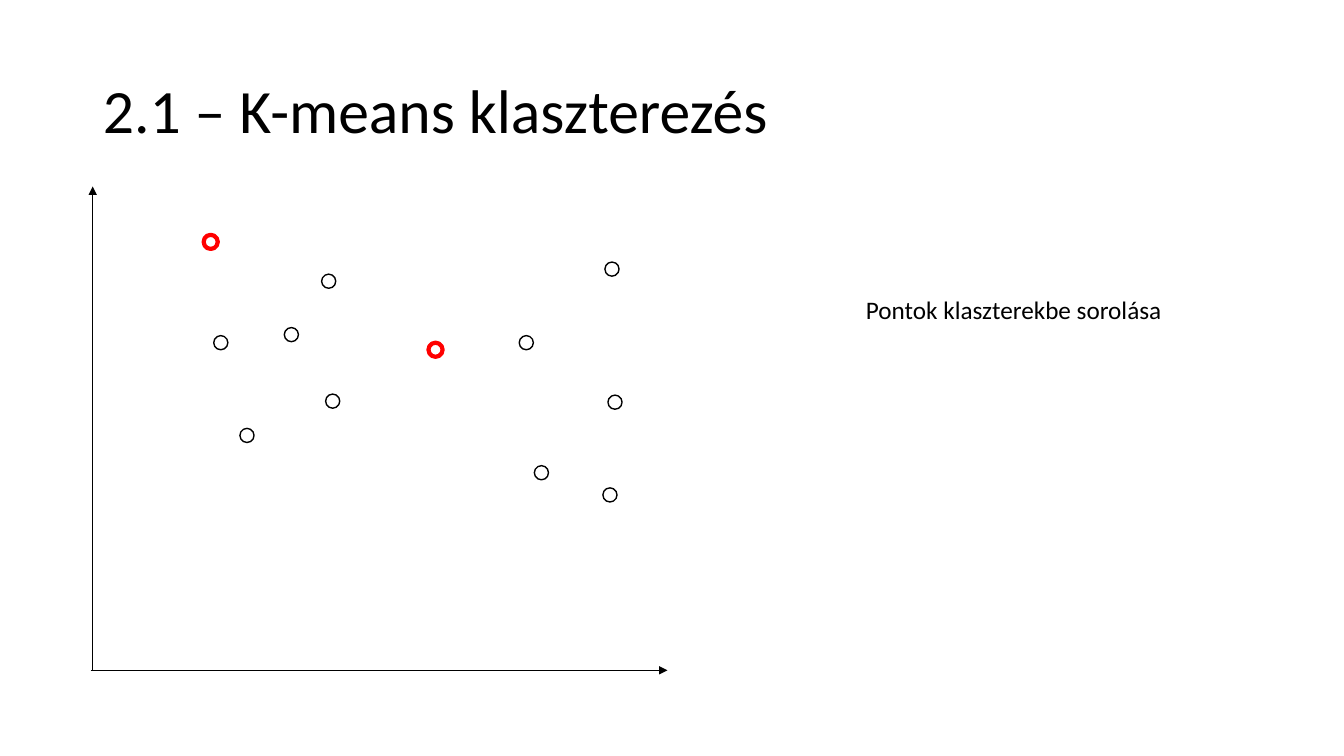
import pptx
import pptx.util
import pptx.dml.color
import pptx.enum.shapes
import pptx.enum.text
import pptx.oxml.ns
import lxml.etree

Inches = pptx.util.Inches
Pt = pptx.util.Pt
Color = pptx.dml.color.RGBColor.from_string

theme = {
    "font": "Calibri",
    "ink": Color("000000"),
    "seed": Color("FF0000"),
    "paper": Color("FFFFFF"),
    "title": Pt(44),
    "note": Pt(18),
    "axis": Pt(0.5),
    "thin": Pt(1),
    "thick": Pt(3),
}


def write(para, text, size):
    run = para.add_run()
    run.text = text
    run.font.name = theme["font"]
    run.font.size = size
    run.font.color.rgb = theme["ink"]


deck = pptx.Presentation()
deck.slide_width = Inches(13.33)
deck.slide_height = Inches(7.5)
slide = deck.slides.add_slide(deck.slide_layouts[5])
shapes = slide.shapes

title = shapes.title
title.left, title.top = Inches(0.92), Inches(0.4)
title.width, title.height = Inches(11.5), Inches(1.45)
title.text_frame.vertical_anchor = pptx.enum.text.MSO_ANCHOR.MIDDLE
head = title.text_frame.paragraphs[0]
head.alignment = pptx.enum.text.PP_ALIGN.LEFT
head.line_spacing = 0.9
write(head, "2.1 – K-means klaszterezés", theme["title"])

base = 6.65
axes = [(0.92, base, 0.92, 1.85), (0.9, base, 6.62, base)]
for ends in axes:
    axis = shapes.add_connector(
        pptx.enum.shapes.MSO_CONNECTOR.STRAIGHT, *[Inches(v) for v in ends])
    axis.line.color.rgb = theme["ink"]
    axis.line.width = theme["axis"]
    tip = lxml.etree.SubElement(
        axis.line._get_or_add_ln(), pptx.oxml.ns.qn("a:tailEnd"))
    tip.set("type", "triangle")
    lxml.etree.SubElement(
        axis._element.spPr, pptx.oxml.ns.qn("a:effectLst"))

points = [
    (3.19, 2.72), (2.12, 3.33), (5.98, 4.84), (3.23, 3.91), (5.15, 3.33),
    (2.82, 3.25), (6.03, 3.92), (5.3, 4.62), (6, 2.6), (2.38, 4.25),
]
seeds = [(2.02, 2.33), (4.25, 3.4)]
side = Inches(0.14)
groups = [(points, "ink", "thin"), (seeds, "seed", "thick")]
for spots, color, width in groups:
    for x, y in spots:
        dot = shapes.add_shape(
            pptx.enum.shapes.MSO_SHAPE.OVAL, Inches(x), Inches(y), side, side)
        dot.shadow.inherit = False
        dot.fill.background()
        dot.line.color.rgb = theme[color]
        dot.line.width = theme[width]
first = dot if seeds[-1] == seeds[0] else shapes[-len(seeds)]
first.fill.solid()
first.fill.fore_color.rgb = theme["paper"]

note = shapes.add_textbox(Inches(8.49), Inches(2.87), Inches(3.16), Inches(0.4))
note.text_frame.word_wrap = False
note.text_frame.auto_size = pptx.enum.text.MSO_AUTO_SIZE.SHAPE_TO_FIT_TEXT
write(note.text_frame.paragraphs[0], "Pontok klaszterekbe sorolása", theme["note"])

deck.save("out.pptx")
